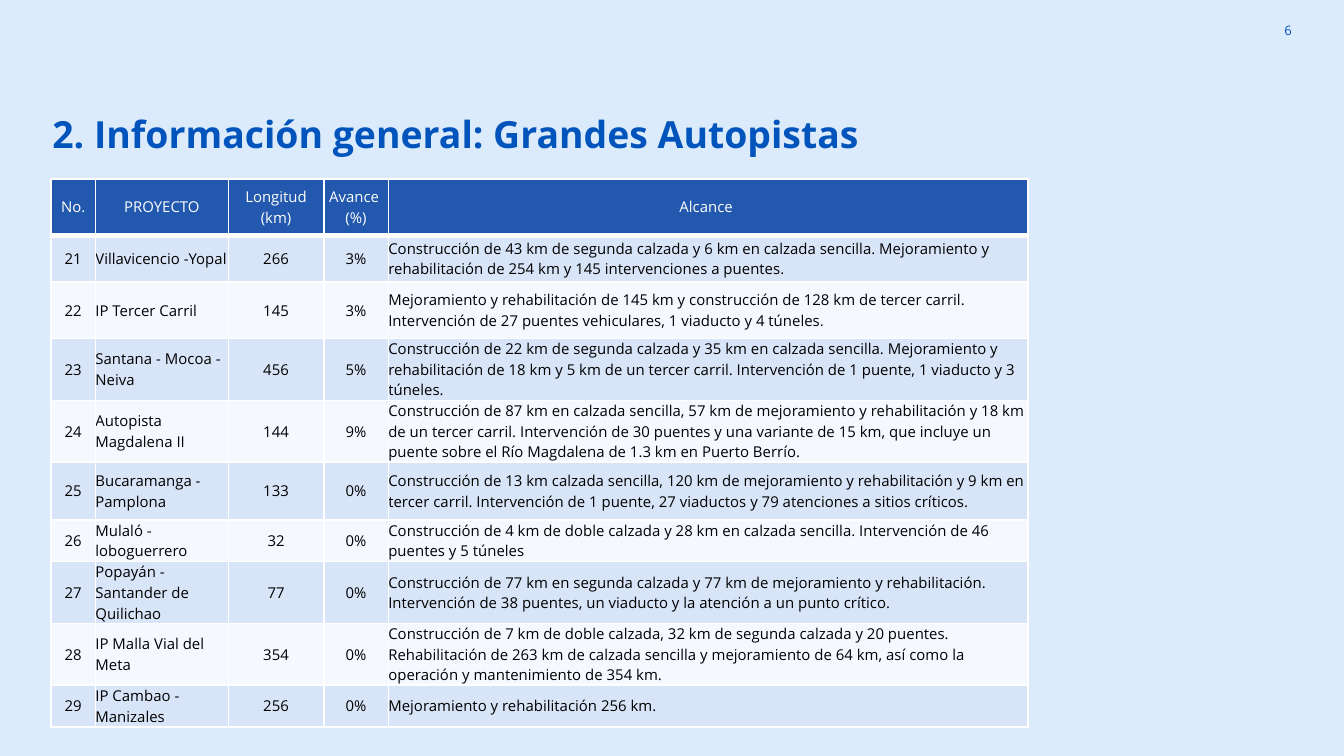
from pptx import Presentation
from pptx.dml.color import RGBColor
from pptx.enum.text import MSO_ANCHOR as Anchor, PP_ALIGN as Align
from pptx.oxml.ns import qn
from pptx.util import Inches, Pt
from lxml.etree import SubElement

FONT = "Open Sans"
BLUE = "0054BC"
HEADER_FILL = "2258AD"
BAND_FILLS = ("D8E4F7", "F5F8FF")
WHITE = "FFFFFF"
BLACK = "000000"

COL_WIDTHS = (0.33, 0.99, 0.71, 0.48, 4.76)
ROW_HEIGHTS = (0.42, 0.35, 0.42, 0.46, 0.46, 0.43, 0.31, 0.46, 0.46, 0.31)
COL_ALIGNS = (Align.CENTER, Align.LEFT, Align.CENTER, Align.CENTER, Align.LEFT)

HEADERS = ("No.", "PROYECTO", "Longitud\n(km)", "Avance \n(%)", "Alcance ")
PROJECTS = (
    ("21", "Villavicencio -Yopal", "266", "3%",
     "Construcción de 43 km de segunda calzada y 6 km en calzada sencilla. "
     "Mejoramiento y rehabilitación de 254 km y 145 intervenciones a puentes."),
    ("22", "IP Tercer Carril", "145", "3%",
     "Mejoramiento y rehabilitación de 145 km y construcción de 128 km de tercer carril. "
     "Intervención de 27 puentes vehiculares, 1 viaducto y 4 túneles."),
    ("23", "Santana - Mocoa - Neiva", "456", "5%",
     "Construcción de 22 km de segunda calzada y 35 km en calzada sencilla. "
     "Mejoramiento y rehabilitación de 18 km y 5 km de un tercer carril. "
     "Intervención de 1 puente, 1 viaducto y 3 túneles."),
    ("24", "Autopista Magdalena II", "144", "9%",
     "Construcción de 87 km en calzada sencilla, 57 km de mejoramiento y rehabilitación "
     "y 18 km de un tercer carril. Intervención de 30 puentes y una variante de 15 km, "
     "que incluye un puente sobre el Río Magdalena de 1.3 km en Puerto Berrío."),
    ("25", "Bucaramanga - Pamplona", "133", "0%",
     "Construcción de 13 km calzada sencilla, 120 km de mejoramiento y rehabilitación "
     "y 9 km en tercer carril. Intervención de 1 puente, 27 viaductos y 79 atenciones "
     "a sitios críticos."),
    ("26", "Mulaló - loboguerrero", "32", "0%",
     "Construcción de 4 km de doble calzada y 28 km en calzada sencilla. "
     "Intervención de 46 puentes y 5 túneles"),
    ("27", "Popayán - Santander de Quilichao", "77", "0%",
     "Construcción de 77 km en segunda calzada y 77 km de mejoramiento y rehabilitación. "
     "Intervención de 38 puentes, un viaducto y la atención a un punto crítico."),
    ("28", "IP Malla Vial del Meta", "354", "0%",
     "Construcción de 7 km de doble calzada, 32 km de segunda calzada y 20 puentes. "
     "Rehabilitación de 263 km de calzada sencilla y mejoramiento de 64 km, "
     "así como la operación y mantenimiento de 354 km."),
    ("29", "IP Cambao - Manizales", "256", "0%",
     "Mejoramiento y rehabilitación 256 km."),
)


def rgb(color):
    return RGBColor.from_string(color)


def set_font(p, size, color, bold=False):
    p.font.name = FONT
    p.font.size = Pt(size)
    p.font.bold = bold
    p.font.color.rgb = rgb(color)


def add_text(s, box, text, size, color, align, insets, bold=False):
    tf = s.shapes.add_textbox(*map(Inches, box)).text_frame
    tf.word_wrap = True
    tf.vertical_anchor = Anchor.MIDDLE
    tf.margin_left = tf.margin_right = Inches(insets[0])
    tf.margin_top = tf.margin_bottom = Inches(insets[1])
    p = tf.paragraphs[0]
    p.text = text
    p.alignment = align
    set_font(p, size, color, bold)
    return p


def add_title(s, text):
    p = add_text(s, (0.07, 0.83, 7.31, 0.37), text, 20, BLUE, Align.LEFT, (0.07, 0.04), True)
    p.line_spacing = 0.9
    pPr = p._p.get_or_add_pPr()
    pPr.set("marL", str(Inches(0.5)))
    pPr.set("indent", str(Inches(-0.25)))


def set_borders(cell, top, bottom):
    tcPr = cell._tc.get_or_add_tcPr()
    for side, width in (("L", 1), ("R", 1), ("T", top), ("B", bottom)):
        ln = SubElement(tcPr, qn(f"a:ln{side}"), w=str(Pt(width)))
        fill = SubElement(ln, qn("a:solidFill"))
        SubElement(fill, qn("a:srgbClr"), val=WHITE)


def fill_cell(cell, text, fill, color, align, top, bottom):
    set_borders(cell, top, bottom)
    cell.fill.solid()
    cell.fill.fore_color.rgb = rgb(fill)
    cell.vertical_anchor = Anchor.MIDDLE
    cell.margin_left = cell.margin_right = cell.margin_top = cell.margin_bottom = 0
    cell.text = text
    for p in cell.text_frame.paragraphs:
        p.alignment = align
        set_font(p, 8, color)


def add_project_table(s):
    rows = (HEADERS, *PROJECTS)
    box = (0.38, 1.33, sum(COL_WIDTHS), sum(ROW_HEIGHTS))
    table = s.shapes.add_table(len(rows), len(HEADERS), *map(Inches, box)).table
    for col, width in zip(table.columns, COL_WIDTHS):
        col.width = Inches(width)
    for row, height in zip(table.rows, ROW_HEIGHTS):
        row.height = Inches(height)
    for i, values in enumerate(rows):
        is_header = i == 0
        fill = HEADER_FILL if is_header else BAND_FILLS[(i - 1) % 2]
        color = WHITE if is_header else BLACK
        top = 3 if i == 1 else 1
        bottom = 3 if is_header else 1
        for j, text in enumerate(values):
            align = Align.CENTER if is_header else COL_ALIGNS[j]
            fill_cell(table.cell(i, j), text, fill, color, align, top, bottom)


def main():
    prs = Presentation()
    prs.slide_width = Inches(10)
    prs.slide_height = prs.slide_width * 9 // 16
    s = prs.slides.add_slide(prs.slide_layouts[6])
    s.background.fill.solid()
    s.background.fill.fore_color.rgb = rgb("DCEBFB")
    add_text(s, (9.11, 0.01, 0.6, 0.43), "6", 7, BLUE, Align.RIGHT, (0.1, 0.1))
    add_title(s, "2. Información general: Grandes Autopistas")
    add_project_table(s)
    prs.save("out.pptx")


if __name__ == "__main__":
    main()
